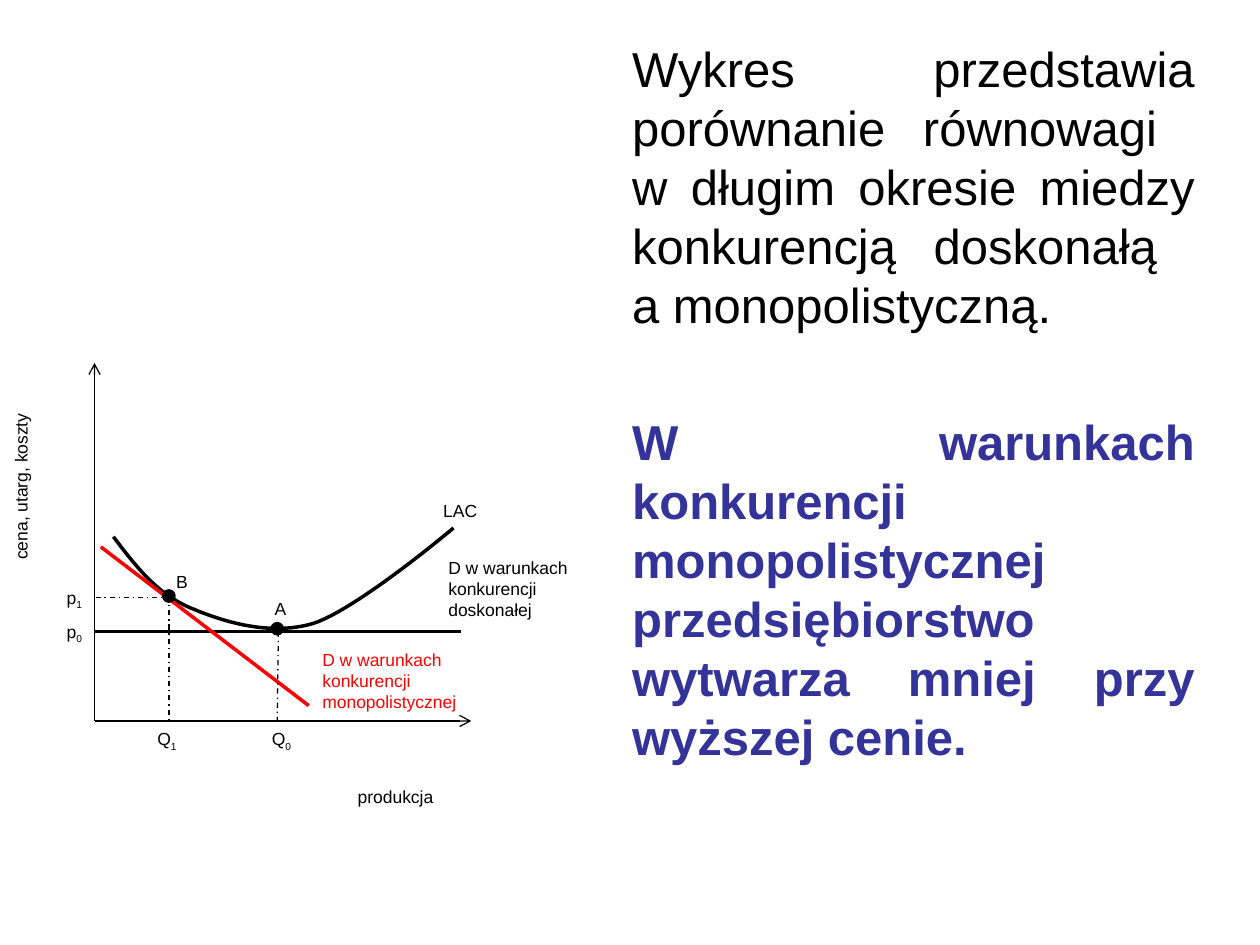
from lxml.etree import SubElement
from pptx import Presentation
from pptx.dml.color import RGBColor
from pptx.enum.dml import MSO_LINE
from pptx.enum.shapes import MSO_CONNECTOR, MSO_SHAPE
from pptx.enum.text import MSO_AUTO_SIZE, PP_ALIGN
from pptx.oxml.ns import qn
from pptx.util import Pt

BLACK, RED, NAVY = "000000", "FF0000", "333399"
THIN, THICK = 0.75, 2

# Explanation: text, colour, bold, space before
EXPLANATION = [
    ("Wykres przedstawia porównanie równowagi \vw długim okresie miedzy "
     "konkurencją doskonałą \va monopolistyczną.", BLACK, False, 0),
    ("W warunkach konkurencji monopolistycznej przedsiębiorstwo wytwarza "
     "mniej przy wyższej cenie.", NAVY, True, 45),
]

# Diagram coordinates
ORIGIN_X, ORIGIN_Y = 54, 412
POINT_B, POINT_A = (96.5, 340.6), (158.4, 359.3)
PRICE_0, PRICE_1 = 361, 341.3
DOT = 5.8

# Lines: start, end, format
AXES = [
    ((ORIGIN_X, ORIGIN_Y), (ORIGIN_X, 207.4), dict(arrow=True)),
    ((ORIGIN_X, ORIGIN_Y), (269.3, ORIGIN_Y), dict(arrow=True)),
]
PERFECT_DEMAND = ((ORIGIN_X, PRICE_0), (263.5, PRICE_0), dict(width=THICK))
MONOPOLISTIC_DEMAND = ((57.6, 312.5), (176.4, 403.2), dict(color=RED, width=THICK))
GUIDES = [
    (POINT_B, (POINT_B[0], ORIGIN_Y), dict(dashed=True)),
    ((159.1, PRICE_0), (158.4, ORIGIN_Y), dict(dashed=True)),
    ((98, PRICE_1), (54.7, PRICE_1), dict(dashed=True)),
]

# Long-run average cost: start, then two controls and an end per segment
LAC_START = (64.8, 306.7)
LAC_SEGMENTS = [
    ((77, 322.6), (88.6, 338.4), (108, 347)),
    ((126.7, 355), (153.4, 363.6), (178.6, 356.4)),
    ((203.8, 348.5), (259.2, 301.7), (259.2, 301.7)),
]

# Labels: text, left, top, width, height, format
LABELS = [
    ("produkcja", 197.3, 445.7, 70.6, 19.4, {}),
    ("cena, utarg, koszty", -47.5, 257.8, 118.8, 19.4, dict(rotation=270)),
    ("LAC", 246.2, 282.2, 46.8, 19.4, {}),
    ("D w warunkach konkurencji doskonałej", 249.1, 314.6, 87.1, 43.9, {}),
    ("D w warunkach konkurencji monopolistycznej", 177.1, 367.2, 92.2, 43.9,
     dict(color=RED)),
    ("Q", 148.3, 412.6, 33.8, 19.4, dict(subscript="0")),
    ("Q", 82.8, 412.6, 33.8, 19.4, dict(subscript="1")),
    ("p", 31, 351.4, 33.8, 19.4, dict(subscript="0")),
    ("p", 31, 331.9, 33.8, 19.4, dict(subscript="1")),
    ("A", 149.8, 338.4, 17.3, 19.4, {}),
    ("B", 93.6, 322.6, 17.3, 19.4, {}),
]


def rgb(value):
    return RGBColor.from_string(value)


def write(paragraph, text, size=10, color=BLACK, bold=False, subscript=""):
    paragraph.text = text
    if subscript:
        paragraph.add_run().text = subscript
    for run in paragraph.runs:
        run.font.name = "Arial"
        run.font.size = Pt(size)
        run.font.bold = bold
        run.font.color.rgb = rgb(color)
    if subscript:
        paragraph.runs[-1].font._element.set("baseline", "-25000")


def add_text_frame(slide, left, top, width, height, rotation=0):
    box = slide.shapes.add_textbox(Pt(left), Pt(top), Pt(width), Pt(height))
    box.rotation = rotation
    box.text_frame.word_wrap = True
    return box.text_frame


def draw_line(slide, start, end, color=BLACK, width=THIN, arrow=False, dashed=False):
    connector = slide.shapes.add_connector(
        MSO_CONNECTOR.STRAIGHT, *(Pt(v) for v in (*start, *end)))
    connector.line.color.rgb = rgb(color)
    connector.line.width = Pt(width)
    if dashed:
        connector.line.dash_style = MSO_LINE.DASH_DOT
    if arrow:
        SubElement(connector.line._get_or_add_ln(), qn("a:tailEnd"), type="arrow")
    SubElement(connector._element.spPr, qn("a:effectLst"))


def bezier_points(start, segments, steps=24):
    points = [start]
    for c1, c2, end in segments:
        first = points[-1]
        for i in range(1, steps + 1):
            t = i / steps
            u = 1 - t
            points.append(tuple(
                u**3 * a + 3 * u**2 * t * b + 3 * u * t**2 * c + t**3 * d
                for a, b, c, d in zip(first, c1, c2, end)))
    return points


def draw_cost_curve(slide):
    points = [(Pt(x), Pt(y)) for x, y in bezier_points(LAC_START, LAC_SEGMENTS)]
    builder = slide.shapes.build_freeform(*points[0])
    builder.add_line_segments(points[1:], close=False)
    curve = builder.convert_to_shape()
    curve.shadow.inherit = False
    curve.fill.background()
    curve.line.color.rgb = rgb(BLACK)
    curve.line.width = Pt(THICK)


def draw_dot(slide, x, y):
    dot = slide.shapes.add_shape(
        MSO_SHAPE.OVAL, Pt(x - DOT / 2), Pt(y - DOT / 2), Pt(DOT), Pt(DOT))
    dot.shadow.inherit = False
    dot.fill.solid()
    dot.fill.fore_color.rgb = rgb(BLACK)
    dot.line.color.rgb = rgb(BLACK)
    dot.line.width = Pt(THICK)


def main():
    deck = Presentation()
    deck.slide_width, deck.slide_height = Pt(720), Pt(540)
    slide = deck.slides.add_slide(deck.slide_layouts[6])

    # Explanation on the right
    frame = add_text_frame(slide, 354.2, 18.7, 335.5, 478)
    for i, (text, color, bold, gap) in enumerate(EXPLANATION):
        paragraph = frame.add_paragraph() if i else frame.paragraphs[0]
        paragraph.alignment = PP_ALIGN.JUSTIFY
        paragraph.space_before = Pt(gap)
        write(paragraph, text, size=28, color=color, bold=bold)

    # Axes, curves, equilibrium points and guides
    for start, end, style in [*AXES, PERFECT_DEMAND]:
        draw_line(slide, start, end, **style)
    draw_cost_curve(slide)
    start, end, style = MONOPOLISTIC_DEMAND
    draw_line(slide, start, end, **style)
    for point in (POINT_B, POINT_A):
        draw_dot(slide, *point)
    for start, end, style in GUIDES:
        draw_line(slide, start, end, **style)

    # Diagram labels
    for text, left, top, width, height, style in LABELS:
        style = dict(style)
        rotation = style.pop("rotation", 0)
        frame = add_text_frame(slide, left, top, width, height, rotation)
        frame.auto_size = MSO_AUTO_SIZE.SHAPE_TO_FIT_TEXT
        write(frame.paragraphs[0], text, **style)

    deck.save("out.pptx")


if __name__ == "__main__":
    main()
